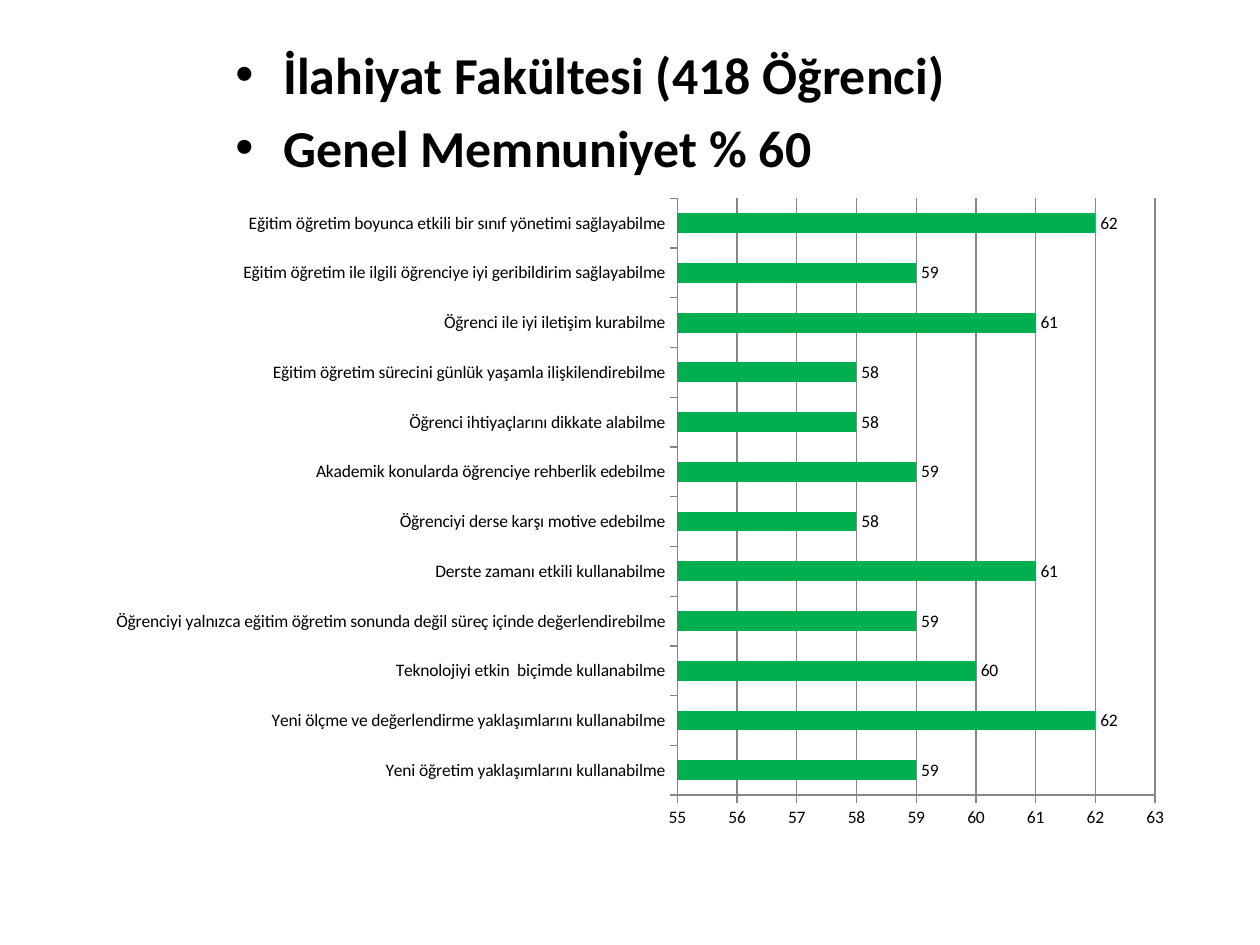
import lxml.etree
import pptx
import pptx.chart.data
import pptx.dml.color
import pptx.enum.chart
import pptx.oxml.ns
import pptx.util
from pptx.util import Inches

BLACK = pptx.dml.color.RGBColor(0x00, 0x00, 0x00)
GREEN = pptx.dml.color.RGBColor(0x00, 0xB0, 0x50)
GRAY = pptx.dml.color.RGBColor(0x86, 0x86, 0x86)
FONT = "Calibri"

HEADINGS = ["İlahiyat Fakültesi (418 Öğrenci)", "Genel Memnuniyet % 60"]
SATISFACTION = [
    ("Yeni öğretim yaklaşımlarını kullanabilme", 59),
    ("Yeni ölçme ve değerlendirme yaklaşımlarını kullanabilme", 62),
    ("Teknolojiyi etkin  biçimde kullanabilme", 60),
    ("Öğrenciyi yalnızca eğitim öğretim sonunda değil süreç içinde değerlendirebilme", 59),
    ("Derste zamanı etkili kullanabilme", 61),
    ("Öğrenciyi derse karşı motive edebilme", 58),
    ("Akademik konularda öğrenciye rehberlik edebilme", 59),
    ("Öğrenci ihtiyaçlarını dikkate alabilme", 58),
    ("Eğitim öğretim sürecini günlük yaşamla ilişkilendirebilme", 58),
    ("Öğrenci ile iyi iletişim kurabilme", 61),
    ("Eğitim öğretim ile ilgili öğrenciye iyi geribildirim sağlayabilme", 59),
    ("Eğitim öğretim boyunca etkili bir sınıf yönetimi sağlayabilme", 62),
]

presentation = pptx.Presentation()
presentation.slide_width = Inches(10)
presentation.slide_height = Inches(7.5)
slide = presentation.slides.add_slide(presentation.slide_layouts[6])

# Bulleted headings
heading_box = slide.shapes.add_textbox(Inches(1.77), Inches(0.29), Inches(6.54), Inches(1.18))
text_frame = heading_box.text_frame
text_frame.word_wrap = True
for index, heading in enumerate(HEADINGS):
    paragraph = text_frame.add_paragraph() if index else text_frame.paragraphs[0]
    paragraph.text = heading
    paragraph.space_before = pptx.util.Pt(6)
    paragraph.font.name = FONT
    paragraph.font.size = pptx.util.Pt(29.6)
    paragraph.font.bold = True
    paragraph.font.color.rgb = BLACK
    properties = paragraph._p.get_or_add_pPr()
    properties.set("marL", str(Inches(0.38)))
    properties.set("indent", str(-Inches(0.38)))
    bullet_font = lxml.etree.Element(pptx.oxml.ns.qn("a:buFont"), typeface="Arial")
    bullet = lxml.etree.Element(pptx.oxml.ns.qn("a:buChar"), char="•")
    # Bullets must precede the default run properties
    position = properties.index(properties.find(pptx.oxml.ns.qn("a:defRPr")))
    properties.insert(position, bullet_font)
    properties.insert(position + 1, bullet)

# Satisfaction bar chart
chart_data = pptx.chart.data.CategoryChartData(number_format="0")
chart_data.categories = [category for category, value in SATISFACTION]
chart_data.add_series("Series 1", [value for category, value in SATISFACTION])
chart = slide.shapes.add_chart(
    pptx.enum.chart.XL_CHART_TYPE.BAR_CLUSTERED,
    Inches(0.75), Inches(1.47), Inches(8.66), Inches(5.2), chart_data,
).chart
chart.has_title = False
chart.has_legend = False
chart.font.name = FONT
chart.font.size = pptx.util.Pt(10)
chart.font.color.rgb = BLACK

plot = chart.plots[0]
plot.gap_width = 150
plot.vary_by_categories = False
plot.has_data_labels = True
labels = plot.data_labels
labels.show_value = True
labels.number_format = "0"
labels.number_format_is_linked = False
labels.position = pptx.enum.chart.XL_LABEL_POSITION.OUTSIDE_END
bars = plot.series[0]
bars.format.fill.solid()
bars.format.fill.fore_color.rgb = GREEN
bars.invert_if_negative = False

value_axis = chart.value_axis
value_axis.minimum_scale = 55
value_axis.maximum_scale = 63
value_axis.major_unit = 1
value_axis.has_major_gridlines = True
value_axis.tick_labels.number_format = "0"
value_axis.tick_labels.number_format_is_linked = False
for axis in (chart.category_axis, value_axis):
    axis.major_tick_mark = pptx.enum.chart.XL_TICK_MARK.OUTSIDE
    axis.minor_tick_mark = pptx.enum.chart.XL_TICK_MARK.NONE
for line in (chart.category_axis.format.line, value_axis.format.line,
             value_axis.major_gridlines.format.line):
    line.color.rgb = GRAY
    line.width = pptx.util.Pt(0.75)

presentation.save("out.pptx")
